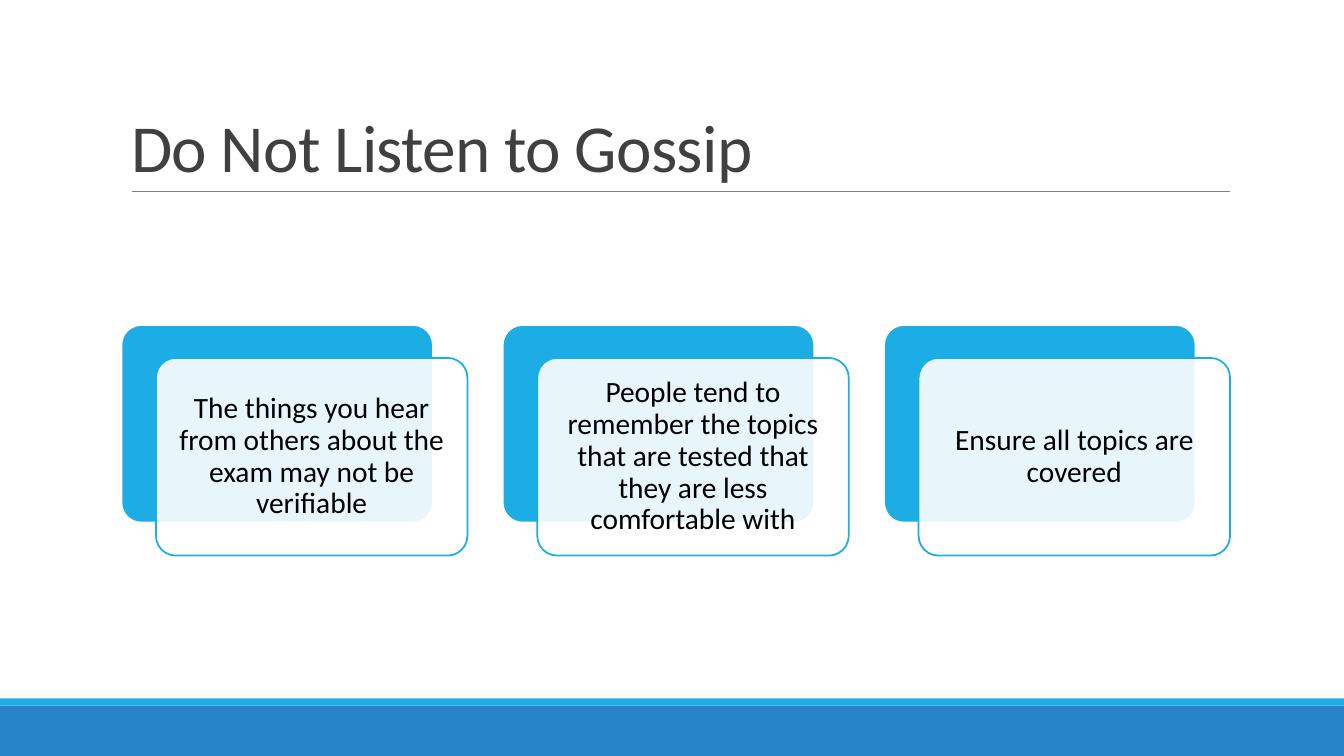
from dataclasses import dataclass

from lxml.etree import SubElement
from pptx import Presentation
from pptx.dml.color import RGBColor
from pptx.enum.shapes import MSO_CONNECTOR, MSO_SHAPE
from pptx.enum.text import MSO_ANCHOR, MSO_AUTO_SIZE, PP_ALIGN
from pptx.oxml.ns import qn
from pptx.shapes.autoshape import Shape
from pptx.slide import Slide
from pptx.util import Cm, Pt


@dataclass(frozen=True)
class Theme:
    accent: RGBColor = RGBColor(0x1C, 0xAD, 0xE4)
    footer: RGBColor = RGBColor(0x26, 0x83, 0xC6)
    rule: RGBColor = RGBColor(0x80, 0x80, 0x80)
    title: RGBColor = RGBColor(0x40, 0x40, 0x40)
    text: RGBColor = RGBColor(0, 0, 0)
    white: RGBColor = RGBColor(0xFF, 0xFF, 0xFF)
    font: str = "Calibri"
    title_size: float = 48
    card_size: float = 21


@dataclass(frozen=True)
class Box:
    left: float
    top: float
    width: float
    height: float

    def shifted(self, dx: float, dy: float = 0) -> "Box":
        return Box(self.left + dx, self.top + dy, self.width, self.height)


THEME = Theme()
WIDTH, HEIGHT = 33.87, 19.05
BANDS = [
    (Box(0, 17.78, WIDTH, 1.27), THEME.footer),
    (Box(0, 17.6, WIDTH, 0.18), THEME.accent),
]
FIRST_CARD = Box(3.06, 8.19, 7.85, 4.98)
CARD_STEP = 9.61
FRONT_SHIFT = (0.87, 0.83)
CARD_TEXTS = [
    "The things you hear from others about the exam may not be verifiable",
    "People tend to remember the topics that are tested that they are less comfortable with",
    "Ensure all topics are covered",
]


def add_box(s: Slide, kind: MSO_SHAPE, box: Box, fill: RGBColor,
            line: RGBColor | None = None) -> Shape:
    sp = s.shapes.add_shape(kind, Cm(box.left), Cm(box.top), Cm(box.width), Cm(box.height))
    sp.shadow.inherit = False
    sp.fill.solid()
    sp.fill.fore_color.rgb = fill
    if line is None:
        sp.line.fill.background()
    else:
        sp.line.color.rgb = line
        sp.line.width = Pt(1.25)
    if kind == MSO_SHAPE.ROUNDED_RECTANGLE:
        sp.adjustments[0] = 0.1
    return sp


def add_title(s: Slide, text: str) -> None:
    sp = s.shapes.title
    sp.left, sp.top, sp.width, sp.height = Cm(3.05), Cm(0.8), Cm(27.94), Cm(4.03)
    tf = sp.text_frame
    tf.text = text
    tf.vertical_anchor = MSO_ANCHOR.BOTTOM
    tf.auto_size = MSO_AUTO_SIZE.NONE
    p = tf.paragraphs[0]
    p.alignment = PP_ALIGN.LEFT
    p.line_spacing = 0.85
    r = p.runs[0]
    r.font.name, r.font.size = THEME.font, Pt(THEME.title_size)
    r.font.color.rgb = THEME.title
    r.font._element.set("spc", "-50")


def add_rule(s: Slide) -> None:
    line = s.shapes.add_connector(MSO_CONNECTOR.STRAIGHT, Cm(3.32), Cm(4.83), Cm(31), Cm(4.83))
    line.line.color.rgb = THEME.rule
    line.line.width = Pt(0.5)
    SubElement(line._element.spPr, qn("a:effectLst"))


def add_card(s: Slide, box: Box, text: str) -> None:
    add_box(s, MSO_SHAPE.ROUNDED_RECTANGLE, box, THEME.accent, THEME.white)
    front = add_box(s, MSO_SHAPE.ROUNDED_RECTANGLE, box.shifted(*FRONT_SHIFT),
                    THEME.white, THEME.accent)
    # Front panel lets a tenth of the back panel through
    color = front._element.spPr.find(qn("a:solidFill")).find(qn("a:srgbClr"))
    SubElement(color, qn("a:alpha")).set("val", "90000")
    tf = front.text_frame
    tf.text = text
    tf.word_wrap = True
    tf.vertical_anchor = MSO_ANCHOR.MIDDLE
    tf.margin_left = tf.margin_right = tf.margin_top = tf.margin_bottom = Cm(0.22)
    p = tf.paragraphs[0]
    p.alignment = PP_ALIGN.CENTER
    p.line_spacing = 0.9
    p.space_after = Pt(7.35)
    r = p.runs[0]
    r.font.name, r.font.size = THEME.font, Pt(THEME.card_size)
    r.font.color.rgb = THEME.text


def main() -> None:
    prs = Presentation()
    prs.slide_width, prs.slide_height = Cm(WIDTH), Cm(HEIGHT)
    s = prs.slides.add_slide(prs.slide_layouts[5])

    # Footer bands
    for box, fill in BANDS:
        add_box(s, MSO_SHAPE.RECTANGLE, box, fill)

    # Heading
    add_rule(s)
    add_title(s, "Do Not Listen to Gossip")

    # Cards
    for i, text in enumerate(CARD_TEXTS):
        add_card(s, FIRST_CARD.shifted(i * CARD_STEP), text)

    prs.save("out.pptx")


if __name__ == "__main__":
    main()
